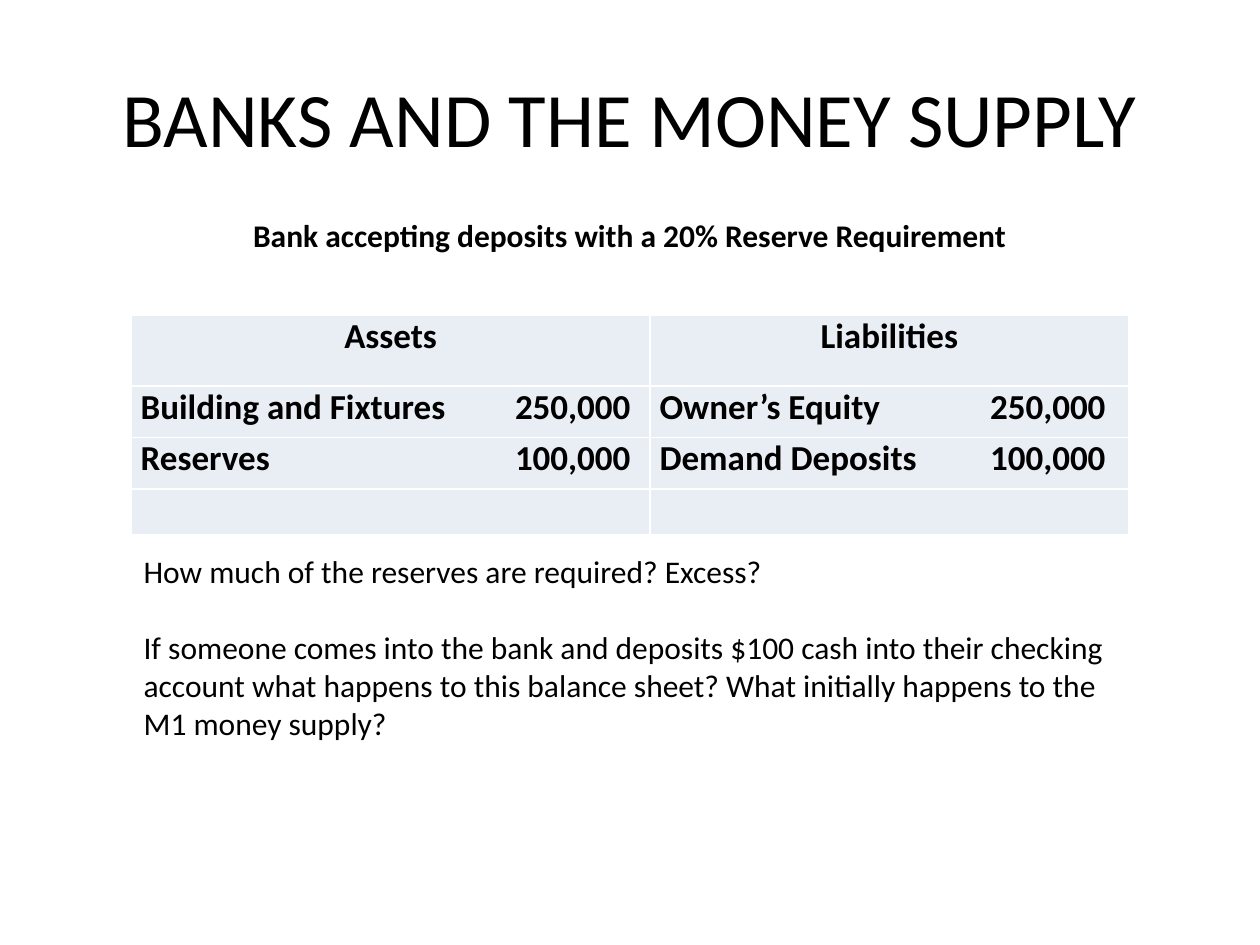
"""Build a slide on a bank's balance sheet and the money supply."""
from lxml import etree
from pptx import Presentation
from pptx.dml.color import RGBColor
from pptx.enum.text import MSO_ANCHOR, PP_ALIGN
from pptx.oxml.ns import qn
from pptx.util import Pt

LEFT, CENTER = PP_ALIGN.LEFT, PP_ALIGN.CENTER
MIDDLE = MSO_ANCHOR.MIDDLE
FONT = "Calibri"
COLORS = {"text": "000000", "cell": "E9EDF4", "line": "FFFFFF"}
X, WIDTH = 75, 570
COLS = [296.5, 273.5]
ROWS = [40.5, 29.5, 29.5, 26]
STOPS = [280, 255]
SHEET = [
    ["Assets", "Liabilities"],
    ["Building and Fixtures\t250,000", "Owner’s Equity\t250,000"],
    ["Reserves\t100,000", "Demand Deposits\t100,000"],
    ["", ""],
]
ASKS = [
    "How much of the reserves are required? Excess?",
    "If someone comes into the bank and deposits $100 cash into their "
    "checking account what happens to this balance sheet? What initially "
    "happens to the M1 money supply?",
]


def color(name):
    """Return a named colour."""
    return RGBColor.from_string(COLORS[name])


def write(para, text, size, bold=False, align=LEFT):
    """Add one formatted run to a paragraph."""
    para.alignment = align
    run = para.add_run()
    run.text = text
    font = run.font
    font.name, font.size, font.bold = FONT, Pt(size), bold
    font.color.rgb = color("text")


def add_title(slide, text):
    """Place and fill the title."""
    title = slide.shapes.title
    title.left, title.top, title.width, title.height = map(Pt, (36, 21.6, 648, 90))
    frame = title.text_frame
    frame.vertical_anchor = MIDDLE
    write(frame.paragraphs[0], text, 44, align=CENTER)


def add_text(slide, top, height, lines, bold=False, align=LEFT):
    """Add a text box with spaced paragraphs."""
    box = slide.shapes.add_textbox(Pt(X), Pt(top), Pt(WIDTH), Pt(height))
    frame = box.text_frame
    frame.word_wrap = True
    for i, line in enumerate(lines):
        para = frame.add_paragraph() if i else frame.paragraphs[0]
        para.space_before = Pt(22 if i else 0)
        write(para, line, 18, bold, align)


def add_stop(para, pos):
    """Add a right-aligned tab stop."""
    tabs = etree.SubElement(para._p.get_or_add_pPr(), qn("a:tabLst"))
    etree.SubElement(tabs, qn("a:tab"), pos=str(Pt(pos)), algn="r")


def style_cell(cell):
    """Set the margins, borders and fill of a cell."""
    cell.margin_left = cell.margin_right = Pt(5.4)
    cell.margin_top = cell.margin_bottom = 0
    props = cell._tc.get_or_add_tcPr()
    for side in ("lnL", "lnR", "lnT", "lnB"):
        line = etree.SubElement(props, qn(f"a:{side}"), w=str(Pt(1)))
        fill = etree.SubElement(line, qn("a:solidFill"))
        etree.SubElement(fill, qn("a:srgbClr"), val=COLORS["line"])
    cell.fill.solid()
    cell.fill.fore_color.rgb = color("cell")


def add_sheet(slide):
    """Add the balance sheet table."""
    frame = slide.shapes.add_table(
        len(ROWS), len(COLS), Pt(X), Pt(180), Pt(WIDTH), Pt(sum(ROWS)))
    table = frame.table
    for col, width in zip(table.columns, COLS):
        col.width = Pt(width)
    for r, (height, texts) in enumerate(zip(ROWS, SHEET)):
        table.rows[r].height = Pt(height)
        for c, text in enumerate(texts):
            cell = table.cell(r, c)
            style_cell(cell)
            para = cell.text_frame.paragraphs[0]
            if text:
                write(para, text, 20, True, LEFT if r else CENTER)
            if "\t" in text:
                add_stop(para, STOPS[c])


def main():
    """Build and save the slide."""
    deck = Presentation()
    deck.slide_width, deck.slide_height = Pt(720), Pt(540)
    slide = deck.slides.add_slide(deck.slide_layouts[5])
    add_title(slide, "BANKS AND THE MONEY SUPPLY")
    add_sheet(slide)
    add_text(slide, 312, 116.5, ASKS)
    add_text(slide, 120, 29, ["Bank accepting deposits with a 20% Reserve Requirement"],
             True, CENTER)
    deck.save("out.pptx")


if __name__ == "__main__":
    main()
